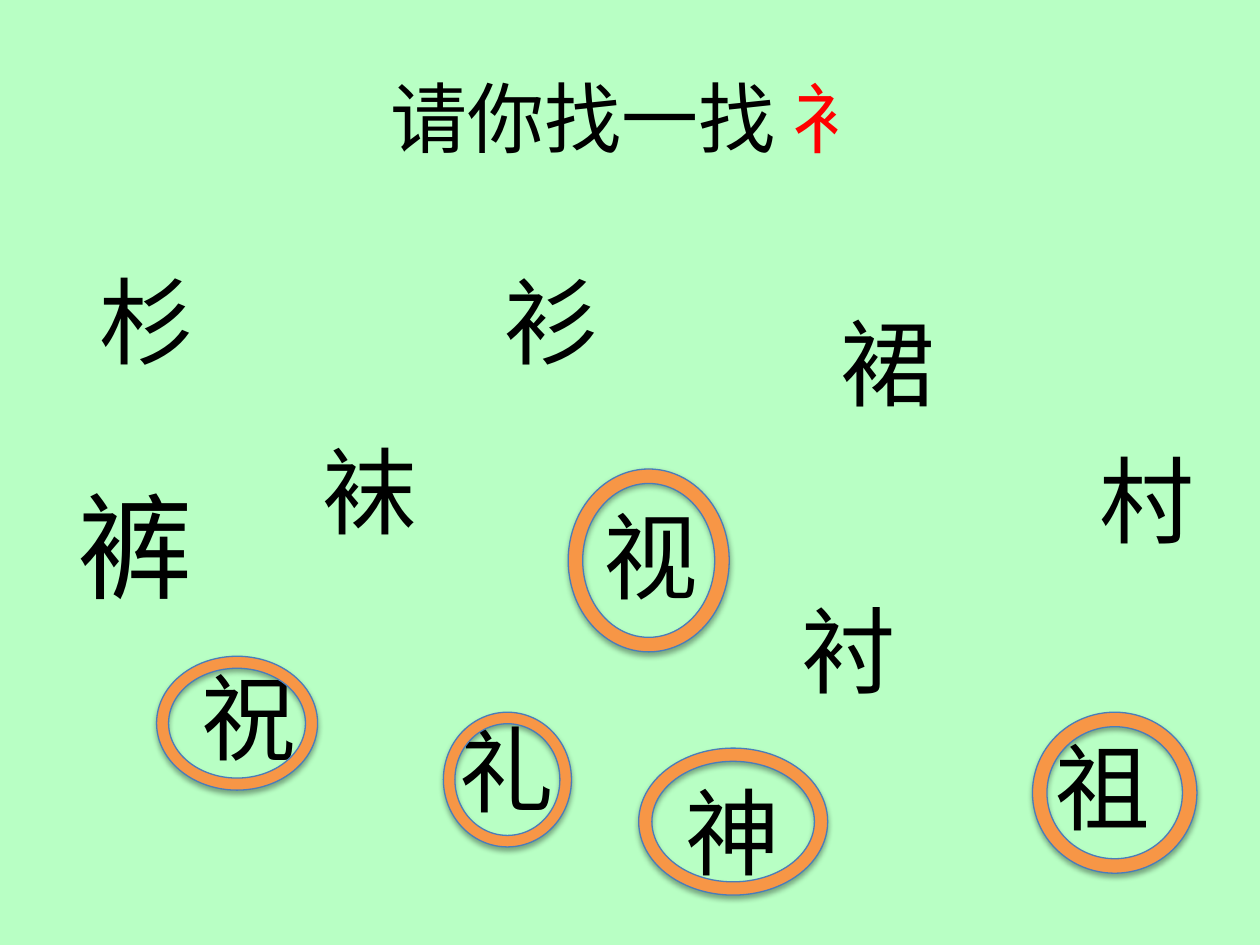
"""Build a slide for spotting the radical 衤 among similar characters."""
import pptx
import pptx.dml.color
import pptx.enum.shapes
import pptx.enum.text
import pptx.util

Pt = pptx.util.Pt
RGB = pptx.dml.color.RGBColor.from_string
THEME = {
    "background": RGB("B8FFC4"), "text": RGB("000000"), "accent": RGB("FF0000"),
    "ring": RGB("F79646"), "outline": RGB("4A7DBA"),
    "font": "Calibri", "title": 44, "character": 54, "large": 66,
}


def add_run(p, text, size, color):
    r = p.add_run()
    r.text = text
    for name, value in {"name": THEME["font"], "size": Pt(size)}.items():
        setattr(r.font, name, value)
    r.font.color.rgb = color


prs = pptx.Presentation()
prs.slide_width, prs.slide_height = Pt(720), Pt(540)
s = prs.slides.add_slide(prs.slide_layouts[5])
s.background.fill.solid()
s.background.fill.fore_color.rgb = THEME["background"]

title = s.shapes.title
placement = {"left": Pt(36), "top": Pt(21.6), "width": Pt(648), "height": Pt(90)}
for name, value in placement.items():
    setattr(title, name, value)
tf = title.text_frame
tf.vertical_anchor = pptx.enum.text.MSO_ANCHOR.MIDDLE
p = tf.paragraphs[0]
p.alignment = pptx.enum.text.PP_ALIGN.CENTER
add_run(p, "请你找一找 ", THEME["title"], THEME["text"])
add_run(p, "衤", THEME["title"], THEME["accent"])

characters = [
    ("杉", 49.6, 147), ("衫", 281, 147), ("视", 338, 281), ("祝", 108, 373),
    ("礼", 255.5, 402.5), ("神", 384.5, 439), ("祖", 596, 413), ("衬", 451, 335),
    ("裙", 473, 171), ("袜", 177, 244), ("村", 621, 249), ("裤", 37.5, 268),
]
for text, left, top in characters:
    size = THEME["large"] if text == "裤" else THEME["character"]
    box = s.shapes.add_textbox(Pt(left), Pt(top), Pt(size + 15), Pt(size * 1.2 + 8))
    tf = box.text_frame
    tf.word_wrap = True
    add_run(tf.paragraphs[0], text, size, THEME["text"])

rings = [
    (324.7, 268, 92, 104.5), (365, 427.5, 108, 84), (590, 407, 94, 92),
    (89.5, 375, 92, 76.5), (253.4, 407, 73.2, 77),
]
for left, top, width, height in rings:
    sp = s.shapes.add_shape(
        pptx.enum.shapes.MSO_SHAPE.DONUT, Pt(left), Pt(top), Pt(width), Pt(height))
    sp.adjustments[0] = 0.09
    sp.fill.solid()
    sp.fill.fore_color.rgb = THEME["ring"]
    sp.line.color.rgb = THEME["outline"]
    sp.line.width = Pt(0.75)

prs.save("out.pptx")
